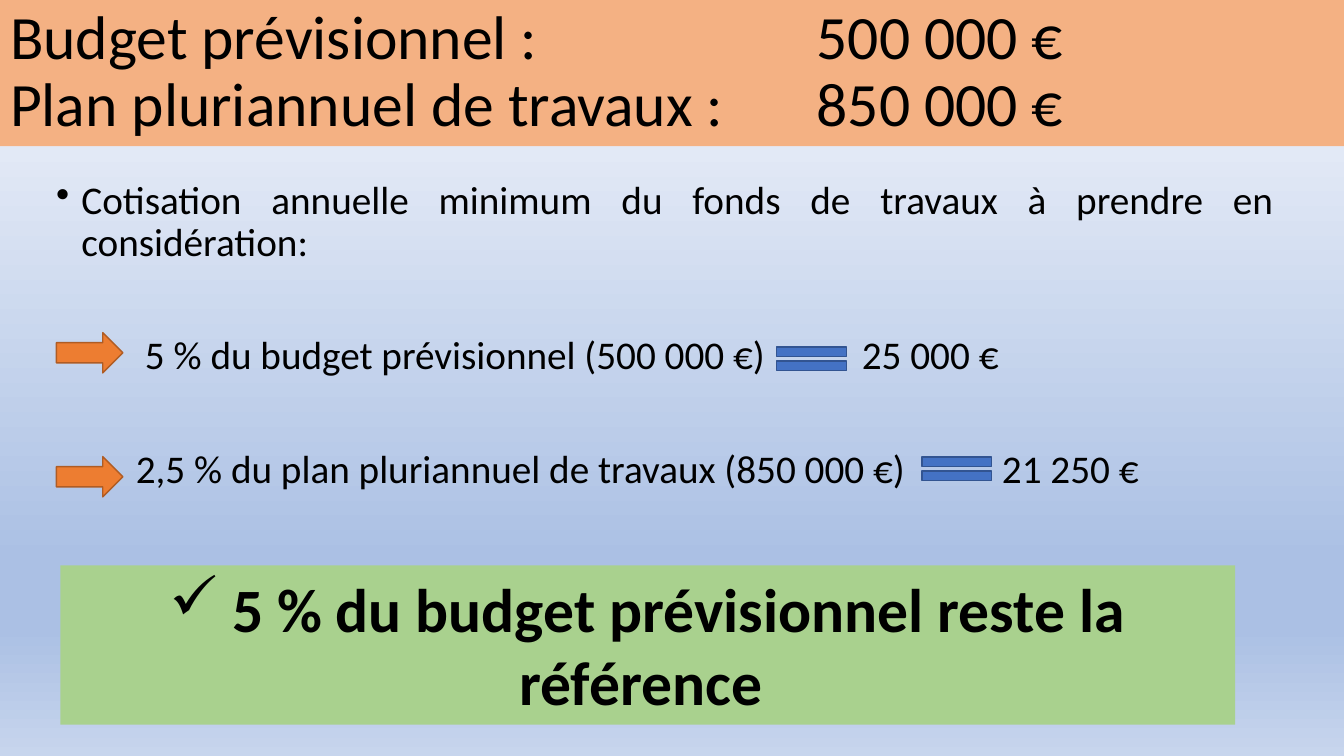
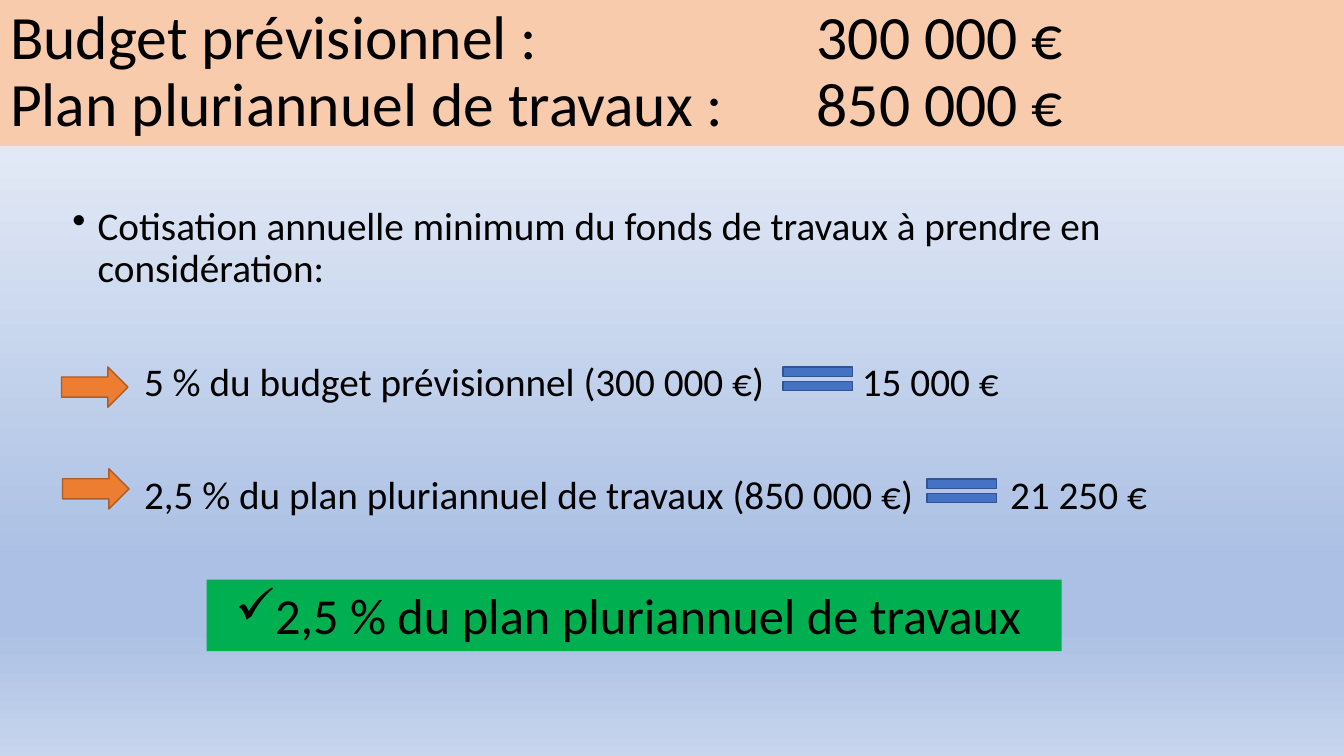
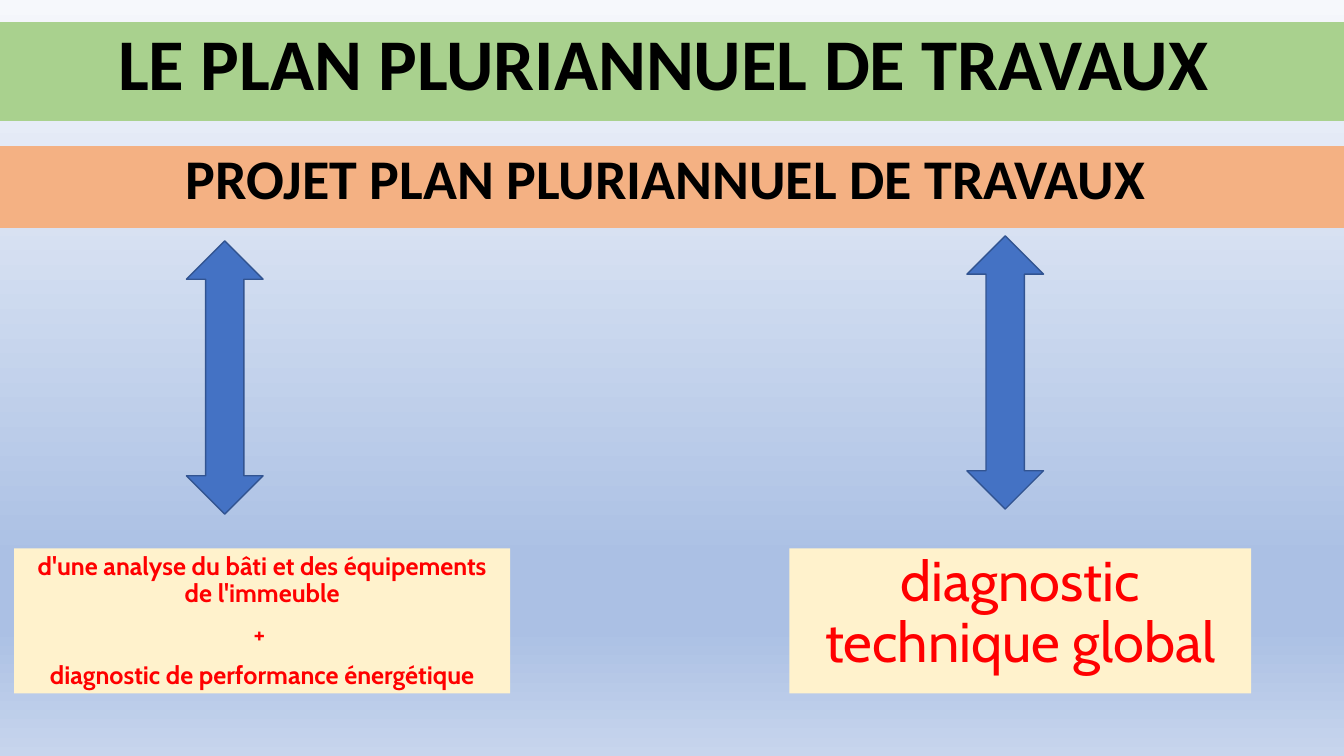
from lxml import etree
from pptx import Presentation
from pptx.dml.color import RGBColor
from pptx.enum.shapes import MSO_SHAPE
from pptx.enum.text import MSO_ANCHOR, MSO_AUTO_SIZE, PP_ALIGN
from pptx.oxml.ns import qn
from pptx.util import Inches, Pt

RECT, EQUAL = MSO_SHAPE.RECTANGLE, MSO_SHAPE.MATH_EQUAL
RIGHT, UPDOWN = MSO_SHAPE.RIGHT_ARROW, MSO_SHAPE.UP_DOWN_ARROW
TOP, MIDDLE = MSO_ANCHOR.TOP, MSO_ANCHOR.MIDDLE
LEFT, CENTER, JUSTIFY = PP_ALIGN.LEFT, PP_ALIGN.CENTER, PP_ALIGN.JUSTIFY
FIXED = MSO_AUTO_SIZE.NONE

COLORS = {
    "black": "000000", "red": "FF0000", "cream": "FFF2CC",
    "peach": "F4B183", "pale": "F8CBAD", "sage": "A9D18E", "green": "00B050",
    "blue": "4472C4", "navy": "325491", "orange": "ED7D31", "rust": "AF5C24",
}
SKY = [(0, "F6F8FC"), (74, "ABC0E4"), (83, "ABC0E4"), (100, "C7D5ED")]
WIDE = 13.33


def draw(slide, kind, box, fill, line=None):
    """Add a shape, or shape the title when kind is None."""
    if kind is None:
        shape = slide.shapes.title
        shape.left, shape.top, shape.width, shape.height = map(Inches, box)
    else:
        shape = slide.shapes.add_shape(kind, *map(Inches, box))
        shape.shadow.inherit = False
    shape.fill.solid()
    shape.fill.fore_color.rgb = RGBColor.from_string(COLORS[fill])
    if line:
        shape.line.color.rgb = RGBColor.from_string(COLORS[line])
        shape.line.width = Pt(1)
    else:
        shape.line.fill.background()
    return shape


def write(shape, lines, size, align=CENTER, bold=False, color="black",
          face="Calibri", anchor=TOP, pitch=0.9, gap=10, bullet=None,
          hang=0, tabs=()):
    """Fill a shape; bullet marks the first line, tabs lists stops per line."""
    frame = shape.text_frame
    frame.word_wrap, frame.auto_size = True, FIXED
    frame.vertical_anchor = anchor
    for i, text in enumerate(lines):
        para = frame.add_paragraph() if i else frame.paragraphs[0]
        para.text = text
        para.alignment = LEFT if i and align == JUSTIFY else align
        para.line_spacing = pitch
        para.space_before = Pt(gap if i else 0)
        props = para._p.get_or_add_pPr()
        if bullet and i == 0:
            props.set("marL", str(Inches(hang)))
            props.set("indent", str(-Inches(hang)))
            etree.SubElement(props, qn("a:buChar"), char=bullet)
        if i < len(tabs) and tabs[i]:
            stops = etree.SubElement(props, qn("a:tabLst"))
            for stop in tabs[i]:
                etree.SubElement(stops, qn("a:tab"), pos=str(Inches(stop)), algn="l")
        para.font.size, para.font.bold, para.font.name = Pt(size), bold, face
        para.font.color.rgb = RGBColor.from_string(COLORS[color])


prs = Presentation()
prs.slide_width, prs.slide_height = Inches(WIDE), Inches(7.5)
layout = prs.slide_layouts[5]

# Shared background gradient
master = prs.slide_master
sky = master.background.fill
sky.gradient()
sky.gradient_angle = 270
stops = master.element.find(".//" + qn("p:bg")).find(".//" + qn("a:gsLst"))
for old in list(stops):
    stops.remove(old)
for pos, tint in SKY:
    stop = etree.SubElement(stops, qn("a:gs"), pos=str(pos * 1000))
    etree.SubElement(stop, qn("a:srgbClr"), val=tint)

# Budget slides: one worked example each
CASES = [
    dict(budget="500 000 €", share="25 000 €", band="peach",
         body=(0.46, 1.74, 12.27, 4.76), align=JUSTIFY,
         tabs=[(), (0.88, 7.99), (0.79, 9.38)],
         equals=[(7.58, 3.36), (9.02, 4.45)], arrows=[(0.56, 3.3), (0.56, 4.53)],
         box=(0.6, 5.61, 11.65, 1.58), fill="sage", size=44, bold=True,
         result=" 5 % du budget prévisionnel reste la référence "),
    dict(budget="300 000 €", share="15 000 €", band="pale",
         body=(0.62, 2, 12.21, 4.76), align=LEFT,
         tabs=[(), (0.71, 7.83), (0.71, 9.3)],
         equals=[(7.64, 3.56), (9.07, 4.67)], arrows=[(0.61, 3.64), (0.62, 4.65)],
         box=(2.05, 5.75, 8.48, 0.71), fill="green", size=36, bold=False,
         result="2,5 % du plan pluriannuel de travaux "),
]
for case in CASES:
    slide = prs.slides.add_slide(layout)
    title = draw(slide, None, (0, 0, WIDE, 1.45), case["band"])
    write(title, [f"Budget prévisionnel : \t{case['budget']}\v"
                  "Plan pluriannuel de travaux : \t850 000 €"],
          44, LEFT, anchor=MIDDLE, tabs=[(8,)])

    # Question and the two sums
    body = slide.shapes.add_textbox(*map(Inches, case["body"]))
    write(body, [
        "Cotisation annuelle minimum du fonds de travaux à prendre en considération:",
        f"\t5 % du budget prévisionnel ({case['budget']})\t{case['share']}",
        "\t2,5 % du plan pluriannuel de travaux (850 000 €)\t21 250 €",
    ], 28, case["align"], gap=50.7, bullet="•", hang=0.25, tabs=case["tabs"])

    # Result
    result = draw(slide, RECT, case["box"], case["fill"])
    write(result, [case["result"]], case["size"], bold=case["bold"],
          pitch=1.0, bullet="✓")

    # Signs
    for spot in case["equals"]:
        draw(slide, EQUAL, (*spot, 0.94, 0.4), "blue", "navy")
    for spot in case["arrows"]:
        draw(slide, RIGHT, (*spot, 0.66, 0.4), "orange", "rust")

# Plan slide: heading bands
slide = prs.slides.add_slide(layout)
title = draw(slide, None, (0, 0.22, WIDE, 0.98), "sage")
write(title, ["LE PLAN PLURIANNUEL DE TRAVAUX "], 52, bold=True)
band = draw(slide, RECT, (0, 1.45, WIDE, 0.81), "peach")
write(band, ["PROJET PLAN PLURIANNUEL DE TRAVAUX "], 40, bold=True)

# Arrows and the two sources
for spot in [(1.85, 2.39), (9.59, 2.34)]:
    draw(slide, UPDOWN, (*spot, 0.76, 2.71), "blue", "navy")
PARTS = [
    (0.14, 4.92, 18, True, ["d'une analyse du bâti et des équipements de l'immeuble",
                            "+ ", "diagnostic de performance énergétique"]),
    (7.83, 4.58, 40, False, ["diagnostic technique global"]),
]
for left, width, size, bold, lines in PARTS:
    card = draw(slide, RECT, (left, 5.44, width, 1.44), "cream")
    write(card, lines, size, bold=bold, color="red", face="Cabin")

prs.save("out.pptx")
